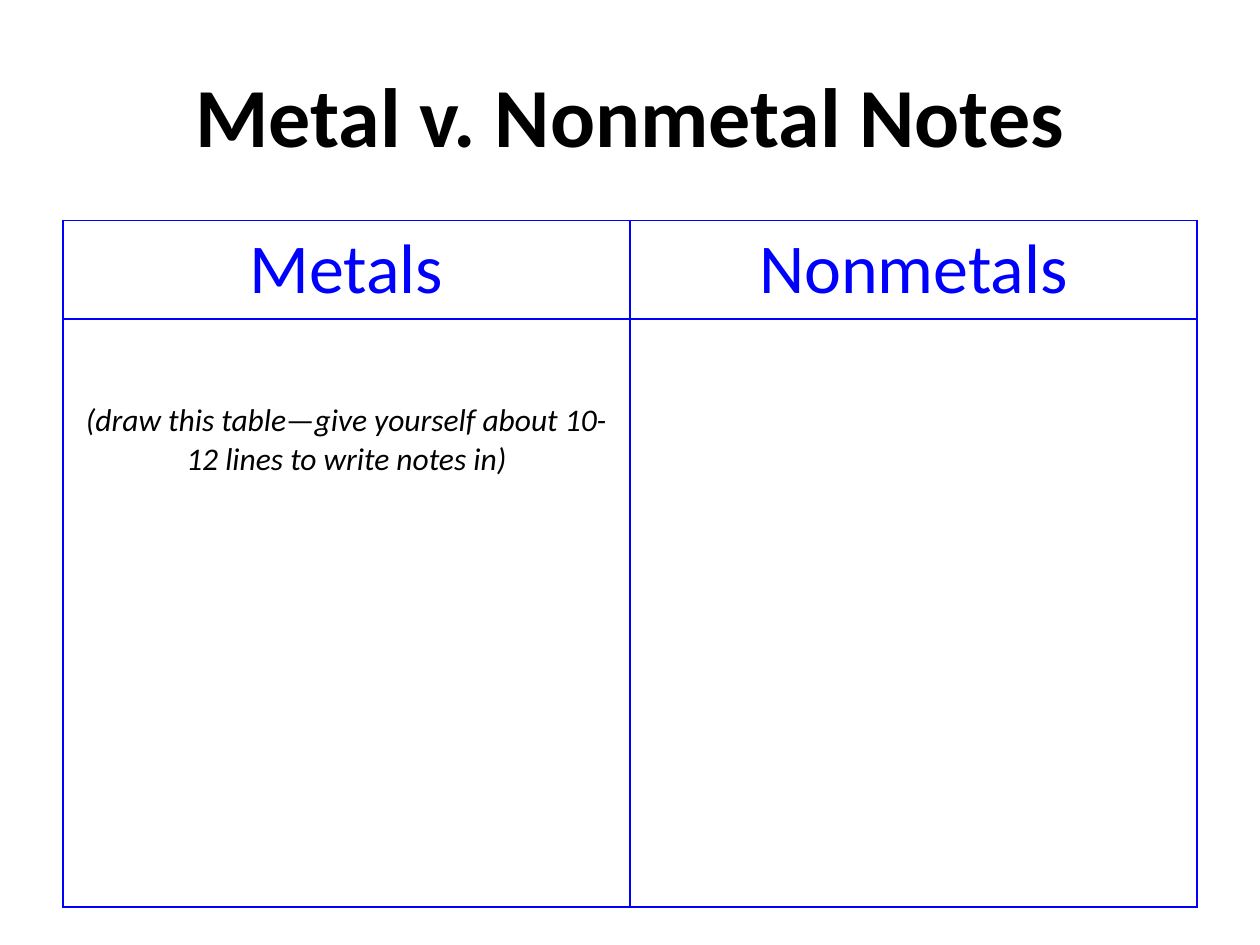
import pptx
import pptx.util
import pptx.dml.color
import pptx.enum.text
import pptx.oxml
import pptx.oxml.ns

Inches = pptx.util.Inches
Pt = pptx.util.Pt
COLORS = {"ink": "000000", "accent": "0000FF"}


class NotesSlide:
    font_name = "Calibri"
    border_width = Pt(1)

    def __init__(self, presentation):
        self.slide = presentation.slides.add_slide(presentation.slide_layouts[5])

    def set_text(self, text_frame, text, size, color, bold=False, italic=False):
        text_frame.text = text
        paragraph = text_frame.paragraphs[0]
        paragraph.alignment = pptx.enum.text.PP_ALIGN.CENTER
        font = paragraph.font
        font.name = self.font_name
        font.size = Pt(size)
        font.bold = bold
        font.italic = italic
        font.color.rgb = pptx.dml.color.RGBColor.from_string(COLORS[color])

    def title(self, text, left, top, width, height):
        shape = self.slide.shapes.title
        shape.left, shape.top = Inches(left), Inches(top)
        shape.width, shape.height = Inches(width), Inches(height)
        shape.text_frame.vertical_anchor = pptx.enum.text.MSO_ANCHOR.MIDDLE
        self.set_text(shape.text_frame, text, 48, "ink", bold=True)

    def border(self, cell):
        properties = cell._tc.get_or_add_tcPr()
        for position, side in enumerate(("lnL", "lnR", "lnT", "lnB")):
            line = pptx.oxml.parse_xml(
                f'<a:{side} {pptx.oxml.ns.nsdecls("a")} w="{self.border_width}">'
                f'<a:solidFill><a:srgbClr val="{COLORS["accent"]}"/></a:solidFill>'
                f'</a:{side}>'
            )
            properties.insert(position, line)

    def table(self, headings, left, top, width, row_heights):
        shape = self.slide.shapes.add_table(
            len(row_heights), len(headings), Inches(left), Inches(top),
            Inches(width), Inches(sum(row_heights)),
        )
        table = shape.table
        for row, height in zip(table.rows, row_heights):
            row.height = Inches(height)
        for cell in table.iter_cells():
            cell.fill.background()
            self.border(cell)
        for column, heading in enumerate(headings):
            self.set_text(table.cell(0, column).text_frame, heading, 40, "accent")
        return table

    def note(self, cell, text, margin_top):
        cell.margin_top = Inches(margin_top)
        self.set_text(cell.text_frame, text, 18, "ink", italic=True)


def main():
    presentation = pptx.Presentation()
    presentation.slide_width = Inches(10)
    presentation.slide_height = Inches(7.5)
    notes = NotesSlide(presentation)
    notes.title("Metal v. Nonmetal Notes", 0.5, 0.45, 9, 0.91)
    table = notes.table(["Metals", "Nonmetals"], 0.5, 1.75, 9, [0.78, 4.67])
    notes.note(
        table.cell(1, 0),
        "(draw this table—give yourself about 10-12 lines to write notes in)",
        0.66,
    )
    presentation.save("out.pptx")


if __name__ == "__main__":
    main()
